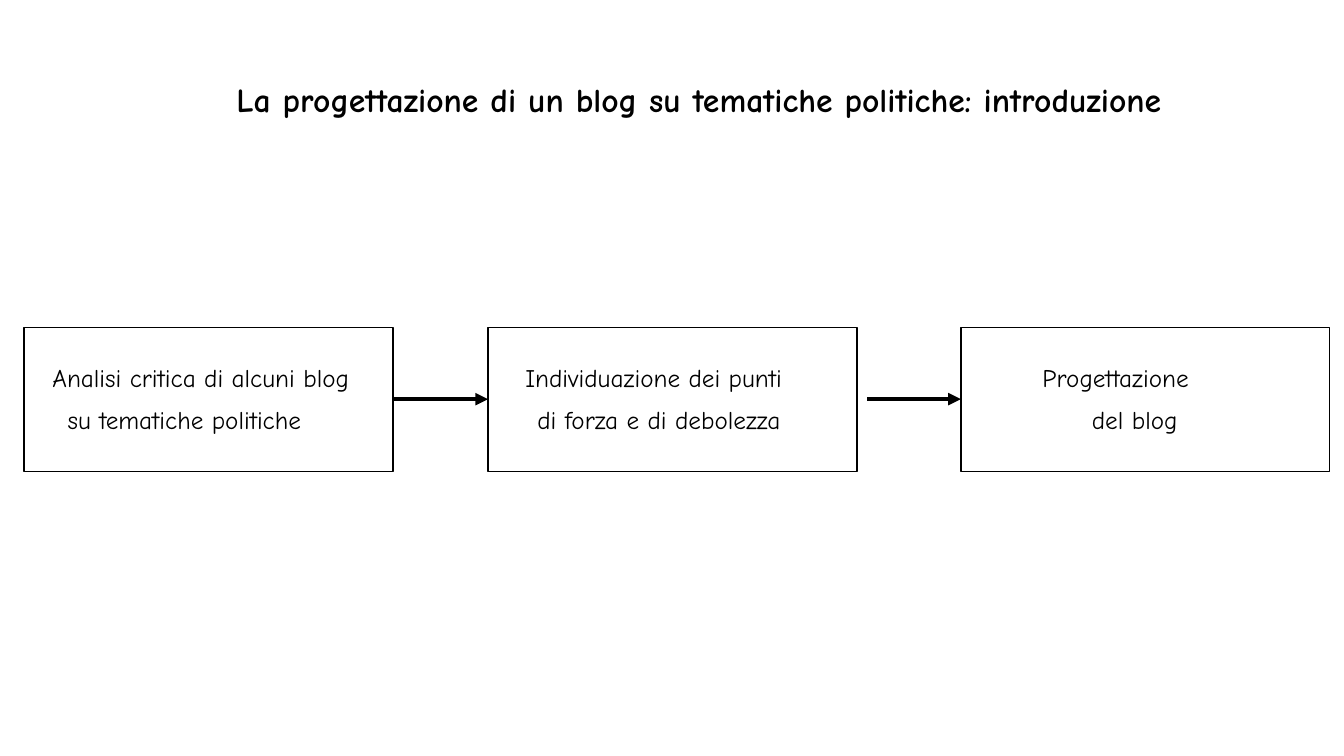
from dataclasses import dataclass

from lxml.etree import SubElement
from pptx import Presentation
from pptx.dml.color import RGBColor
from pptx.enum.shapes import MSO_CONNECTOR, MSO_SHAPE
from pptx.enum.text import MSO_ANCHOR, MSO_AUTO_SIZE, PP_ALIGN
from pptx.oxml.ns import qn
from pptx.slide import Slide
from pptx.text.text import _Paragraph as Paragraph
from pptx.util import Inches, Pt

FONT = "Comic Neue"
BLACK = "000000"
BOX_TOP, BOX_WIDTH, BOX_HEIGHT = 3.25, 3.66, 1.43
ARROW_Y = 3.96


@dataclass
class Line:
    text: str
    indent: float


@dataclass
class Step:
    left: float
    lines: list[Line]


@dataclass
class Arrow:
    start: float
    end: float


STEPS = [
    Step(0.24, [Line("Analisi critica di alcuni blog", 0.28),
                Line("su tematiche politiche", 0.43)]),
    Step(4.84, [Line("Individuazione dei punti", 0.37),
                Line("di forza e di debolezza", 0.49)]),
    Step(9.53, [Line("Progettazione", 0.81),
                Line("del blog", 1.3)]),
]
ARROWS = [Arrow(3.9, 4.84), Arrow(8.6, 9.53)]


def color(value: str) -> RGBColor:
    return RGBColor.from_string(value)


def add_run(paragraph: Paragraph, text: str, size: float, bold: bool = False) -> None:
    run = paragraph.add_run()
    run.text = text
    run.font.name = FONT
    run.font.size = Pt(size)
    run.font.bold = bold
    run.font.color.rgb = color(BLACK)


def add_title(slide: Slide, text: str) -> None:
    title = slide.shapes.title
    title.left, title.top = Inches(1.93), Inches(0.73)
    title.width, title.height = Inches(10), Inches(0.5)
    frame = title.text_frame
    frame.auto_size = MSO_AUTO_SIZE.NONE
    frame.vertical_anchor = MSO_ANCHOR.MIDDLE
    paragraph = frame.paragraphs[0]
    paragraph.alignment = PP_ALIGN.CENTER
    add_run(paragraph, text, 24, bold=True)


def add_step(slide: Slide, step: Step) -> None:
    box = slide.shapes.add_shape(
        MSO_SHAPE.RECTANGLE, Inches(step.left), Inches(BOX_TOP),
        Inches(BOX_WIDTH), Inches(BOX_HEIGHT))
    box.shadow.inherit = False
    box.fill.background()
    box.line.color.rgb = color(BLACK)
    box.line.width = Pt(1)
    frame = box.text_frame
    frame.word_wrap = True
    frame.margin_left = frame.margin_right = 0
    frame.vertical_anchor = MSO_ANCHOR.MIDDLE
    for index, line in enumerate(step.lines):
        paragraph = frame.add_paragraph() if index else frame.paragraphs[0]
        paragraph.alignment = PP_ALIGN.LEFT
        paragraph.line_spacing = Pt(20)
        paragraph.space_before = Pt(10 if index else 0)
        paragraph._p.get_or_add_pPr().set("marL", str(Inches(line.indent)))
        add_run(paragraph, line.text, 18)


def add_arrow(slide: Slide, arrow: Arrow) -> None:
    connector = slide.shapes.add_connector(
        MSO_CONNECTOR.STRAIGHT, Inches(arrow.start), Inches(ARROW_Y),
        Inches(arrow.end), Inches(ARROW_Y))
    connector.line.color.rgb = color(BLACK)
    connector.line.width = Pt(3)
    SubElement(connector.line._get_or_add_ln(), qn("a:tailEnd"), type="triangle")
    SubElement(connector._element.spPr, qn("a:effectLst"))


def main() -> None:
    presentation = Presentation()
    presentation.slide_width = Inches(13.33)
    presentation.slide_height = Inches(7.5)
    title_only = presentation.slide_layouts[5]
    slide = presentation.slides.add_slide(title_only)
    add_title(slide, "La progettazione di un blog su tematiche politiche: introduzione")
    for step in STEPS:
        add_step(slide, step)
    for arrow in ARROWS:
        add_arrow(slide, arrow)
    presentation.save("out.pptx")


if __name__ == "__main__":
    main()
